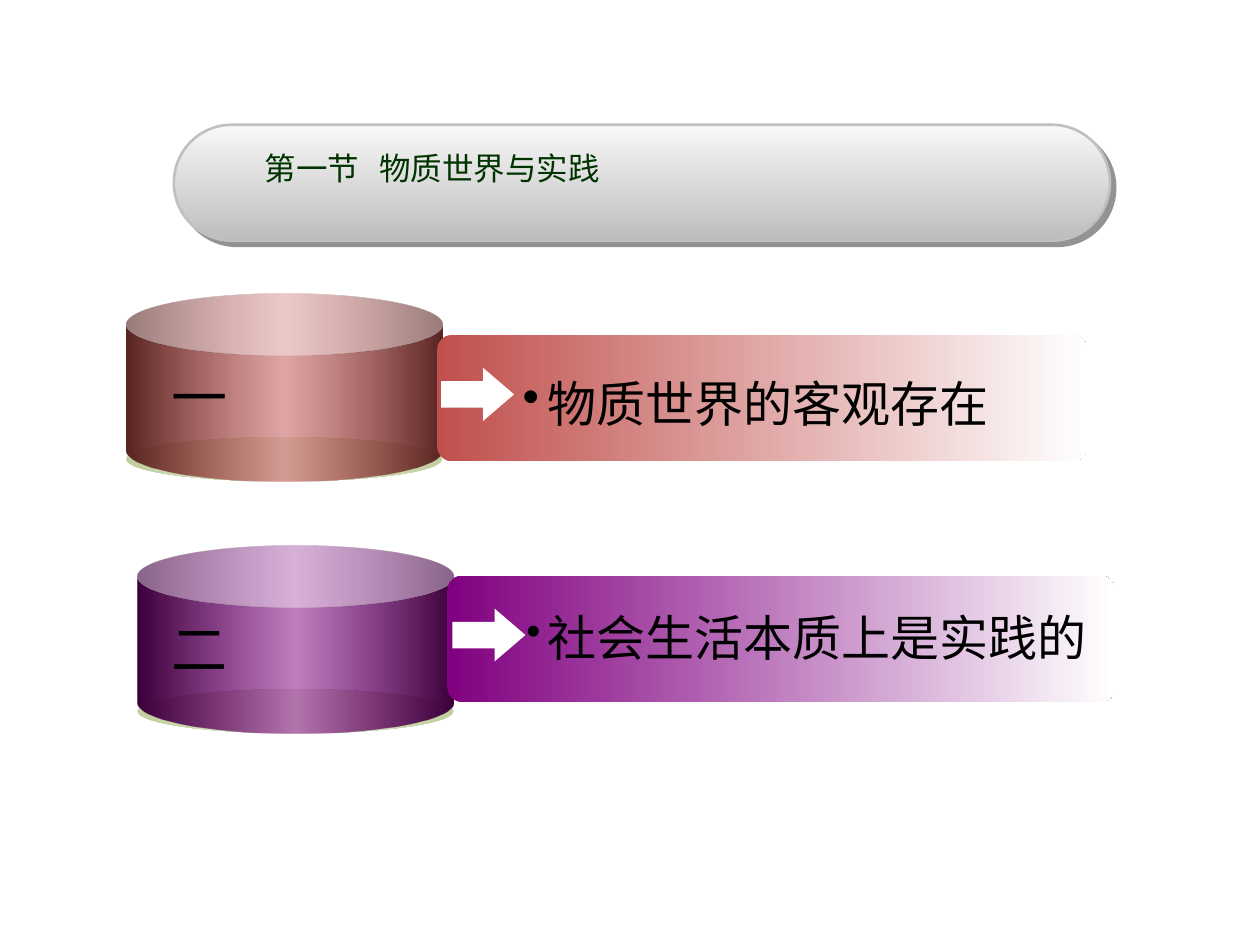
from dataclasses import dataclass

from lxml.etree import SubElement
from pptx import Presentation
from pptx.dml.color import RGBColor
from pptx.enum.shapes import MSO_SHAPE as Preset
from pptx.enum.text import MSO_ANCHOR as Anchor, PP_ALIGN as Align
from pptx.oxml.ns import qn
from pptx.util import Inches, Pt


@dataclass(frozen=True)
class Theme:
    title_font: str = "Noto Sans CJK JP"
    body_font: str = "Noto Sans CJK SC"
    title_size: int = 18
    number_size: int = 32
    topic_size: int = 28
    title: str = "003300"
    text: str = "000000"
    white: str = "FFFFFF"
    base_edge: str = "C1CF9D"
    base_middle: str = "E7ECDC"
    pill_top: str = "F8F8F8"
    pill_bottom: str = "BDBDBD"
    pill_line: str = "C0C0C0"
    shadow: str = "292929"
    red: str = "C0504D"
    red_dark: str = "582523"
    purple: str = "800080"
    purple_dark: str = "3B003B"


theme = Theme()


def add_preset(shapes, preset, place, stops, adjustments=(), angle=0):
    shape = shapes.add_shape(preset, *map(Inches, place))
    shape.shadow.inherit = False
    shape.line.fill.background()
    for index, value in enumerate(adjustments):
        shape.adjustments[index] = value
    if len(stops) == 1:
        shape.fill.solid()
        shape.fill.fore_color.rgb = RGBColor.from_string(stops[0][1])
        return shape
    shape.fill.gradient()
    shape.fill.gradient_angle = angle
    stop_list = next(shape.element.iter(qn("a:gsLst")))
    for old in list(stop_list):
        stop_list.remove(old)
    for position, color, opacity in stops:
        stop = SubElement(stop_list, qn("a:gs"), pos=str(position * 1000))
        tone = SubElement(stop, qn("a:srgbClr"), val=color)
        if opacity < 100:
            SubElement(tone, qn("a:alpha"), val=str(opacity * 1000))
    return shape


def write_text(box, text, font, size, color, anchor):
    frame = box.text_frame
    frame.word_wrap = True
    frame.vertical_anchor = anchor
    para = frame.paragraphs[0]
    para.text = text
    para.alignment = Align.LEFT
    para.font.name = font
    para.font.size = Pt(size)
    para.font.color.rgb = RGBColor.from_string(color)
    properties = next(box.element.iter(qn("a:defRPr")))
    properties.find(qn("a:latin")).addnext(
        properties.makeelement(qn("a:ea"), {"typeface": font}))
    return next(box.element.iter(qn("a:pPr")))


deck = Presentation()
deck.slide_width, deck.slide_height = Inches(10), Inches(7.5)
page = deck.slides.add_slide(deck.slide_layouts[5])

topic_left = 4.35
rows = [
    dict(number="一", topic="物质世界的客观存在", color=theme.red, dark=theme.red_dark,
         can=(1, 2.33), bar=(3.47, 2.66, 5.16), arrow=(3.5, 2.92),
         label=(1.26, 2.83), text=(4.05, 2.91, 4.08), bullet=100),
    dict(number="二", topic="社会生活本质上是实践的", color=theme.purple, dark=theme.purple_dark,
         can=(1.09, 4.33), bar=(3.55, 4.57, 5.3), arrow=(3.59, 4.83),
         label=(1.26, 4.83), text=(4.08, 4.77, 5.01), bullet=86),
]

for row in rows:
    shapes = page.shapes.add_group_shape().shapes
    can_left, can_top = row["can"]
    add_preset(shapes, Preset.OVAL, (can_left, can_top + 1.14, 2.51, 0.35),
               [(0, theme.base_edge, 100), (50, theme.base_middle, 100),
                (100, theme.base_edge, 100)])
    add_preset(shapes, Preset.CAN, (can_left, can_top, 2.51, 1.49),
               [(0, row["dark"], 100), (50, row["color"], 50), (100, row["dark"], 100)],
               [0.332])
    add_preset(shapes, Preset.ROUNDED_RECTANGLE, (*row["bar"], 1),
               [(0, row["color"], 100), (100, theme.white, 100)], [0.115])
    add_preset(shapes, Preset.RIGHT_ARROW, (*row["arrow"], 0.58, 0.42),
               [(0, theme.white, 100)], [0.5, 0.583])

    number = shapes.add_textbox(*map(Inches, (*row["label"], 2.16, 0.63)))
    write_text(number, row["number"], theme.body_font, theme.number_size,
               theme.text, Anchor.MIDDLE)

    topic = shapes.add_textbox(*map(Inches, (*row["text"], 0.57)))
    topic_format = next(topic.element.iter(qn("a:p"))).get_or_add_pPr()
    hanging = Inches(topic_left - row["text"][0] - 0.1)
    topic_format.set("marL", str(hanging))
    topic_format.set("indent", str(-hanging))
    SubElement(topic_format, qn("a:buSzPct"), val=str(row["bullet"] * 1000))
    SubElement(topic_format, qn("a:buChar"), char="•")
    write_text(topic, row["topic"], theme.body_font, theme.topic_size,
               theme.text, Anchor.MIDDLE)

pill = add_preset(page.shapes, Preset.ROUNDED_RECTANGLE, (1.38, 0.99, 7.43, 0.92),
                  [(0, theme.pill_top, 100), (100, theme.pill_bottom, 100)], [0.5], 270)
pill.line.color.rgb = RGBColor.from_string(theme.pill_line)
pill.line.width = Pt(1.5)
effects = next(pill.element.iter(qn("a:effectLst")))
shadow = SubElement(effects, qn("a:outerShdw"), dist=str(Pt(4.2)), dir="2700000",
                    algn="ctr", rotWithShape="0")
shadow_color = SubElement(shadow, qn("a:srgbClr"), val=theme.shadow)
SubElement(shadow_color, qn("a:alpha"), val="50000")

title = page.shapes.title
title.left, title.top, title.width, title.height = map(Inches, (2, 1.16, 6.65, 0.7))
title.text_frame.margin_top = Inches(0.02)
title_format = next(title.element.iter(qn("a:p"))).get_or_add_pPr()
tabs = SubElement(title_format, qn("a:tabLst"))
SubElement(tabs, qn("a:tab"), pos=str(Inches(0.91)), algn="l")
write_text(title, "第一节\t物质世界与实践", theme.title_font, theme.title_size,
           theme.title, Anchor.TOP)
pill.element.addnext(title.element)

deck.save("out.pptx")
